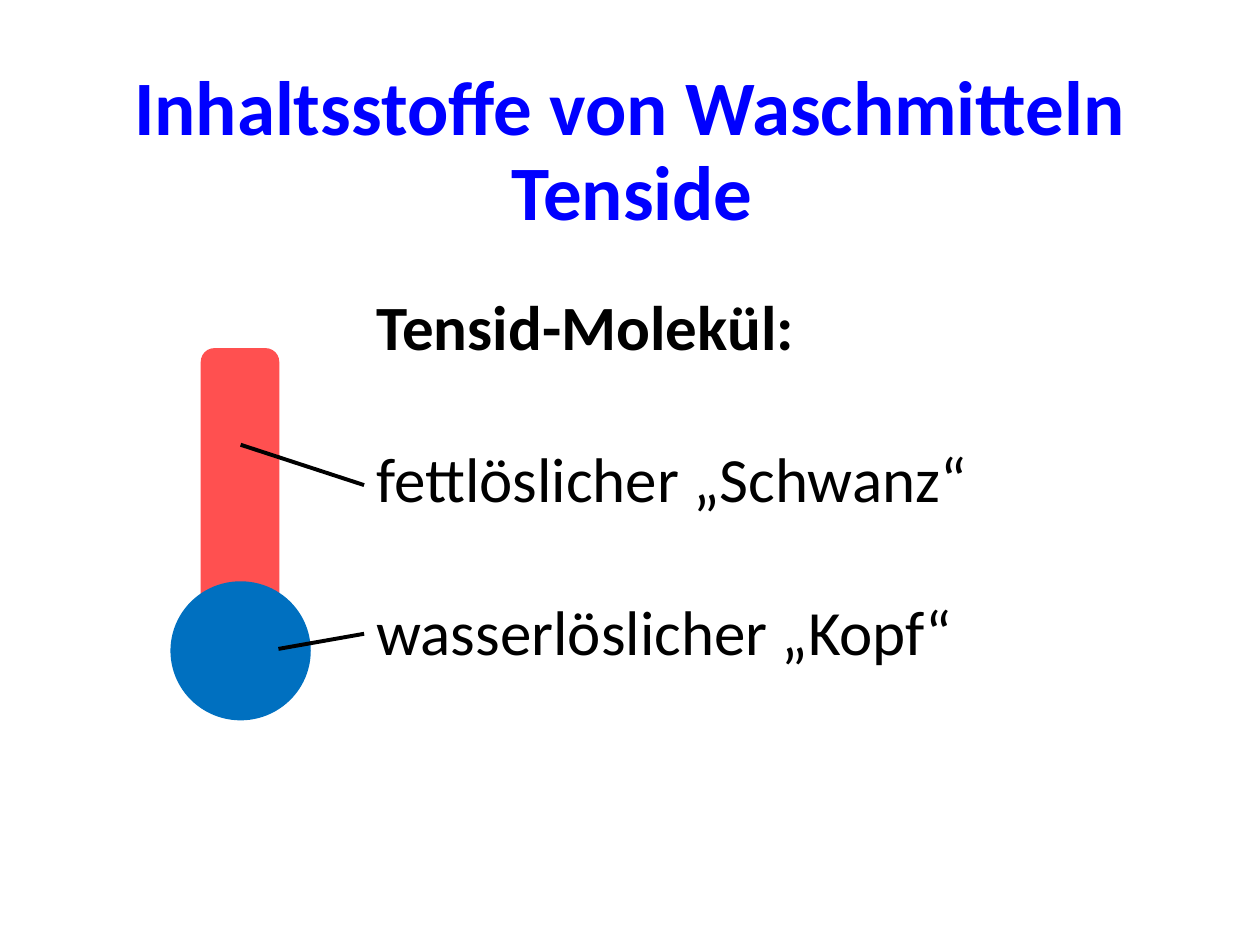
from dataclasses import dataclass

from lxml import etree
from pptx import Presentation
from pptx import util as u
from pptx.dml.color import RGBColor
from pptx.enum import shapes, text
from pptx.oxml.ns import qn


@dataclass(frozen=True)
class Theme:
    font: str = "Calibri"
    heading: RGBColor = RGBColor(0x00, 0x00, 0xFF)
    ink: RGBColor = RGBColor(0x00, 0x00, 0x00)
    tail: RGBColor = RGBColor(0xFF, 0x50, 0x50)
    head: RGBColor = RGBColor(0x00, 0x70, 0xC0)
    heading_size: u.Pt = u.Pt(44)
    body_size: u.Pt = u.Pt(36)
    body_gap: u.Pt = u.Pt(44)
    outline: u.Pt = u.Pt(1)
    pointer: u.Pt = u.Pt(2.25)


@dataclass(frozen=True)
class Box:
    left: float
    top: float
    width: float
    height: float

    def lengths(self) -> list[u.Inches]:
        return [u.Inches(v) for v in (self.left, self.top, self.width, self.height)]


@dataclass(frozen=True)
class Line:
    wording: str
    bold: bool = False


@dataclass(frozen=True)
class TextBlock:
    box: Box
    lines: tuple[Line, ...]
    size: u.Pt
    color: RGBColor
    align: text.PP_ALIGN
    anchor: text.MSO_ANCHOR = text.MSO_ANCHOR.TOP
    gap: u.Pt = u.Pt(0)


@dataclass(frozen=True)
class MoleculePart:
    kind: shapes.MSO_SHAPE
    box: Box
    color: RGBColor


@dataclass(frozen=True)
class Pointer:
    start: tuple[float, float]
    end: tuple[float, float]


THEME = Theme()

HEADINGS = [
    TextBlock(Box(0.69, 0.4, 8.62, 0.87),
              (Line("Inhaltsstoffe von Waschmitteln", True),),
              THEME.heading_size, THEME.heading, text.PP_ALIGN.CENTER,
              text.MSO_ANCHOR.MIDDLE),
    TextBlock(Box(1.28, 1.09, 7.48, 0.84), (Line("Tenside", True),),
              THEME.heading_size, THEME.heading, text.PP_ALIGN.CENTER),
]
MOLECULE = [
    MoleculePart(shapes.MSO_SHAPE.ROUNDED_RECTANGLE, Box(1.6, 2.77, 0.61, 2.17), THEME.tail),
    MoleculePart(shapes.MSO_SHAPE.OVAL, Box(1.36, 4.62, 1.1, 1.09), THEME.head),
]
LABELS = TextBlock(
    Box(2.89, 2.23, 5.86, 3.13),
    (Line("Tensid-Molekül:", True),
     Line("fettlöslicher „Schwanz“"),
     Line("wasserlöslicher „Kopf“")),
    THEME.body_size, THEME.ink, text.PP_ALIGN.LEFT, gap=THEME.body_gap)
POINTERS = [
    Pointer((1.91, 3.53), (2.89, 3.85)),
    Pointer((2.21, 5.15), (2.89, 5.03)),
]


def draw_text(slide, block: TextBlock) -> None:
    frame = slide.shapes.add_textbox(*block.box.lengths()).text_frame
    frame.word_wrap = True
    frame.vertical_anchor = block.anchor
    for index, line in enumerate(block.lines):
        paragraph = frame.add_paragraph() if index else frame.paragraphs[0]
        paragraph.text = line.wording
        paragraph.alignment = block.align
        if index:
            paragraph.space_before = block.gap
        paragraph.font.name = THEME.font
        paragraph.font.size = block.size
        paragraph.font.bold = line.bold
        paragraph.font.color.rgb = block.color


def draw_part(group, part: MoleculePart) -> None:
    shape = group.shapes.add_shape(part.kind, *part.box.lengths())
    shape.shadow.inherit = False
    shape.fill.solid()
    shape.fill.fore_color.rgb = part.color
    shape.line.color.rgb = part.color
    shape.line.width = THEME.outline


def draw_pointer(slide, pointer: Pointer) -> None:
    ends = [u.Inches(v) for v in pointer.start + pointer.end]
    connector = slide.shapes.add_connector(shapes.MSO_CONNECTOR.STRAIGHT, *ends)
    connector.line.color.rgb = THEME.ink
    connector.line.width = THEME.pointer
    etree.SubElement(connector._element.spPr, qn("a:effectLst"))


def main() -> None:
    presentation = Presentation()
    presentation.slide_width = u.Inches(10)
    presentation.slide_height = u.Inches(7.5)
    slide = presentation.slides.add_slide(presentation.slide_layouts[6])

    for heading in HEADINGS:
        draw_text(slide, heading)
    molecule = slide.shapes.add_group_shape()
    for part in MOLECULE:
        draw_part(molecule, part)
    draw_text(slide, LABELS)
    for pointer in POINTERS:
        draw_pointer(slide, pointer)

    presentation.save("out.pptx")


if __name__ == "__main__":
    main()
